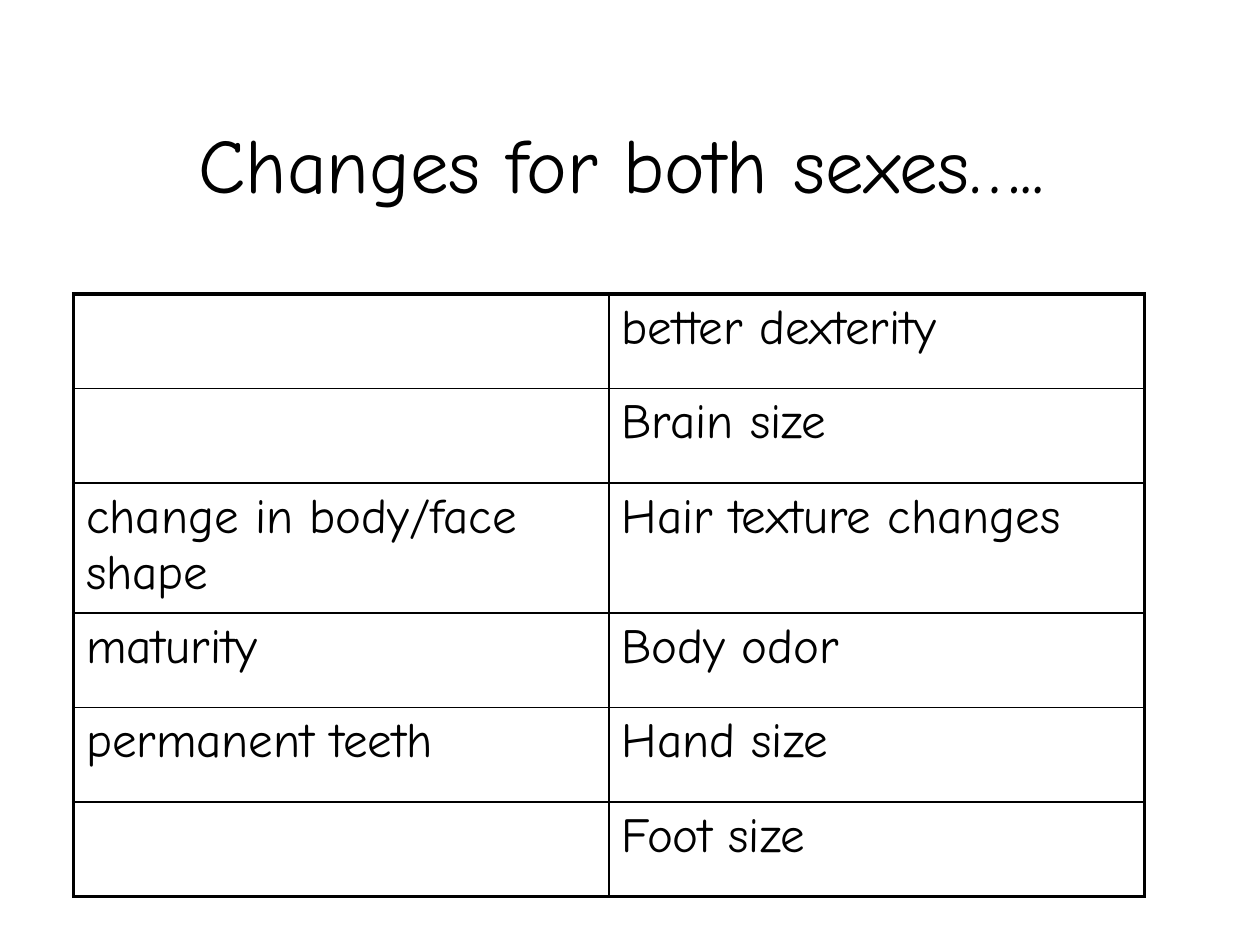
"""Build a slide with a two-column table of changes for both sexes."""
from lxml.etree import SubElement
from pptx import Presentation
from pptx.dml.color import RGBColor
from pptx.enum.text import MSO_ANCHOR, PP_ALIGN
from pptx.oxml.ns import qn
from pptx.util import Pt

COLORS = {"ink": "000000", "paper": "FFFFFF"}
FONT = "Comic Neue"
OUTER, INNER = Pt(2.25), Pt(1)
CHANGES = [
    ("", "better dexterity"),
    ("", "Brain size"),
    ("change in body/face shape", "Hair texture changes"),
    ("maturity", "Body odor"),
    ("permanent teeth", "Hand size"),
    ("", "Foot size"),
]
ROW_HEIGHTS = [54, 54, 74.2, 54, 54, 54]


def write(paragraph, text, size):
    run = paragraph.add_run()
    run.text = text
    for key, value in {"name": FONT, "size": Pt(size), "bold": False}.items():
        setattr(run.font, key, value)
    run.font.color.rgb = RGBColor.from_string(COLORS["ink"])


def add_border(cell, side, width):
    line = SubElement(cell._tc.get_or_add_tcPr(), qn(f"a:ln{side}"), w=str(width))
    fill = SubElement(line, qn("a:solidFill"))
    SubElement(fill, qn("a:srgbClr"), val=COLORS["ink"])


prs = Presentation()
prs.slide_width, prs.slide_height = Pt(720), Pt(540)
slide = prs.slides.add_slide(prs.slide_layouts[5])
slide.background.fill.solid()
slide.background.fill.fore_color.rgb = RGBColor.from_string(COLORS["paper"])

heading = slide.shapes.title
for key, value in {"left": 42, "top": 48, "width": 612, "height": 90}.items():
    setattr(heading, key, Pt(value))
heading.text_frame.vertical_anchor = MSO_ANCHOR.MIDDLE
heading.text_frame.paragraphs[0].alignment = PP_ALIGN.CENTER
write(heading.text_frame.paragraphs[0], " Changes for both sexes…..", 44)

changes = slide.shapes.add_table(
    len(CHANGES), 2, Pt(42), Pt(168), Pt(612), Pt(sum(ROW_HEIGHTS))
).table
changes.first_row = changes.horz_banding = False
for column in changes.columns:
    column.width = Pt(306)

last_row = len(CHANGES) - 1
for row, (entries, height) in enumerate(zip(CHANGES, ROW_HEIGHTS)):
    changes.rows[row].height = Pt(height)
    for col, entry in enumerate(entries):
        cell = changes.cell(row, col)
        outer_sides = {"L": col == 0, "R": col == 1, "T": row == 0, "B": row == last_row}
        for side, is_outer in outer_sides.items():
            add_border(cell, side, OUTER if is_outer else INNER)
        cell.fill.background()
        if entry:
            paragraph = cell.text_frame.paragraphs[0]
            spacing = SubElement(paragraph._p.get_or_add_pPr(), qn("a:spcBef"))
            SubElement(spacing, qn("a:spcPct"), val="20000")
            write(paragraph, entry, 28)

prs.save("out.pptx")
